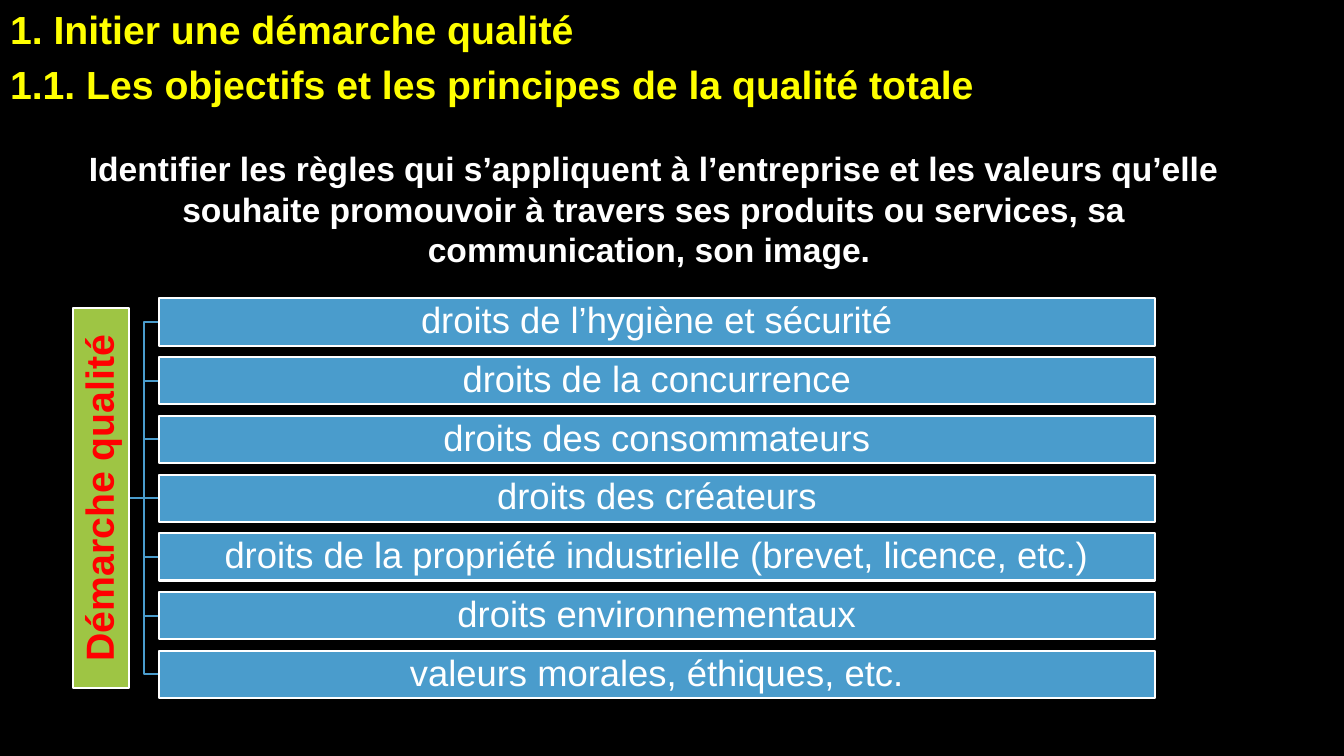
from lxml.etree import SubElement
from pptx import Presentation
from pptx.dml.color import RGBColor
from pptx.enum.shapes import MSO_CONNECTOR, MSO_SHAPE
from pptx.enum.text import MSO_ANCHOR, MSO_AUTO_SIZE, PP_ALIGN
from pptx.oxml.ns import qn
from pptx.util import Cm, Pt

COLORS = {
    "background": "000000",
    "heading": "FFFF00",
    "text": "FFFFFF",
    "outline": "FFFFFF",
    "rule": "4A9CCC",
    "root": "9EC544",
    "root_text": "FF0000",
}
FONT = "Arial"

HEADING = [
    "1. Initier une démarche qualité",
    "1.1. Les objectifs et les principes de la qualité totale",
]
INTRO = (
    "Identifier les règles qui s’appliquent à l’entreprise et les valeurs "
    "qu’elle souhaite promouvoir à travers ses produits ou services, sa "
    "communication, son image. "
)
ROOT = "Démarche qualité"
RULES = [
    "droits de l’hygiène et sécurité",
    "droits de la concurrence",
    "droits des consommateurs",
    "droits des créateurs",
    "droits de la propriété industrielle (brevet, licence, etc.)",
    "droits environnementaux",
    "valeurs morales, éthiques, etc.",
]

# Tree geometry in centimetres
RULE_LEFT, RULE_TOP, RULE_WIDTH, RULE_HEIGHT = 4.01, 7.52, 25.1, 1.19
RULE_PITCH = 1.48
ROOT_LENGTH, ROOT_THICKNESS = 9.58, 1.4
ROOT_CENTER_X = 2.55
ROOT_CENTER_Y = RULE_TOP + (RULE_PITCH * (len(RULES) - 1) + RULE_HEIGHT) / 2


def color(name):
    return RGBColor.from_string(COLORS[name])


def format_paragraph(para, size, color_name, bold, align):
    para.alignment = align
    for span in para.runs:
        span.font.name = FONT
        span.font.size = Pt(size)
        span.font.bold = bold
        span.font.color.rgb = color(color_name)


def add_heading(slide):
    title = slide.shapes.title
    title.left, title.top, title.width, title.height = Cm(0), Cm(0), Cm(25.27), Cm(2.77)
    frame = title.text_frame
    frame.text = "\n".join(HEADING)
    frame.auto_size = MSO_AUTO_SIZE.NONE
    frame.vertical_anchor = MSO_ANCHOR.TOP
    for para in frame.paragraphs:
        para.space_before = para.space_after = Pt(3)
        format_paragraph(para, 28, "heading", True, PP_ALIGN.LEFT)


def add_intro(slide):
    box = slide.shapes.add_textbox(Cm(1.3), Cm(3.61), Cm(30.35), Cm(3.33))
    frame = box.text_frame
    frame.word_wrap = True
    frame.text = INTRO
    para = frame.paragraphs[0]
    para.space_before = Pt(12)
    format_paragraph(para, 24, "text", True, PP_ALIGN.CENTER)


def add_box(slide, left, top, width, height, text, fill, text_color, size, bold=False):
    box = slide.shapes.add_shape(
        MSO_SHAPE.RECTANGLE, Cm(left), Cm(top), Cm(width), Cm(height)
    )
    box.shadow.inherit = False
    box.fill.solid()
    box.fill.fore_color.rgb = color(fill)
    box.line.color.rgb = color("outline")
    box.line.width = Pt(1.5)
    frame = box.text_frame
    frame.word_wrap = True
    frame.vertical_anchor = MSO_ANCHOR.MIDDLE
    frame.margin_left = frame.margin_right = Cm(0.05)
    frame.margin_top = frame.margin_bottom = Cm(0.05)
    frame.text = text
    para = frame.paragraphs[0]
    para.line_spacing = 0.9
    format_paragraph(para, size, text_color, bold, PP_ALIGN.CENTER)
    return box


def add_branch(slide, kind, y):
    root_right = ROOT_CENTER_X + ROOT_THICKNESS / 2
    branch = slide.shapes.add_connector(
        kind, Cm(root_right), Cm(ROOT_CENTER_Y), Cm(RULE_LEFT), Cm(y)
    )
    branch.line.color.rgb = color("rule")
    branch.line.width = Pt(1.5)
    SubElement(branch.element.spPr, qn("a:effectLst"))


def add_tree(slide):
    tops = [RULE_TOP + RULE_PITCH * index for index in range(len(RULES))]
    middle = len(RULES) // 2

    # Branches lie behind the boxes
    for index, top in enumerate(tops):
        kind = MSO_CONNECTOR.STRAIGHT if index == middle else MSO_CONNECTOR.ELBOW
        add_branch(slide, kind, top + RULE_HEIGHT / 2)

    # Root, read from bottom to top
    root = add_box(
        slide,
        ROOT_CENTER_X - ROOT_LENGTH / 2,
        ROOT_CENTER_Y - ROOT_THICKNESS / 2,
        ROOT_LENGTH, ROOT_THICKNESS,
        ROOT, "root", "root_text", 28, bold=True,
    )
    root.rotation = 270

    # Rules
    for top, rule in zip(tops, RULES):
        add_box(slide, RULE_LEFT, top, RULE_WIDTH, RULE_HEIGHT, rule, "rule", "text", 26)


def main():
    deck = Presentation()
    deck.slide_width, deck.slide_height = Cm(33.87), Cm(19.05)
    slide = deck.slides.add_slide(deck.slide_layouts[5])
    slide.background.fill.solid()
    slide.background.fill.fore_color.rgb = color("background")
    add_heading(slide)
    add_intro(slide)
    add_tree(slide)
    deck.save("out.pptx")


if __name__ == "__main__":
    main()
